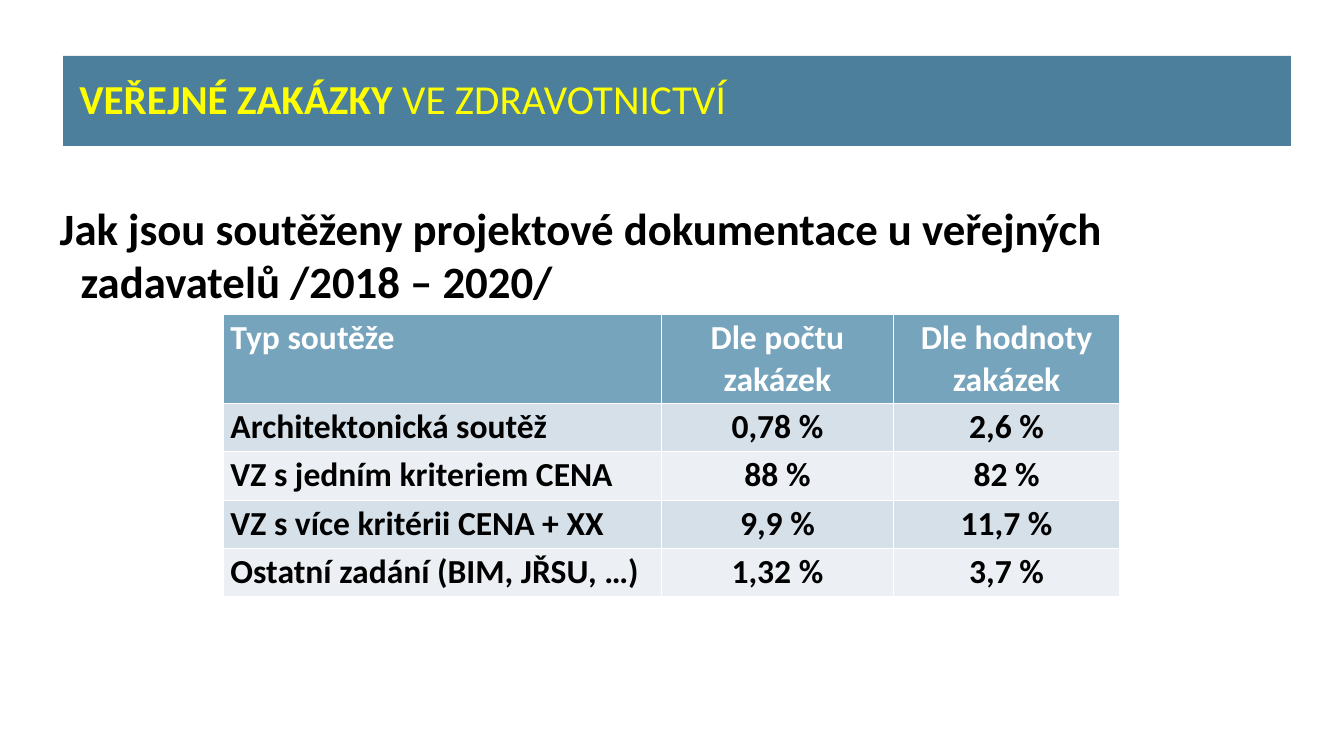
import pptx
import pptx.dml.color
import pptx.enum.text
import pptx.util

Inches, Pt = pptx.util.Inches, pptx.util.Pt
Align = pptx.enum.text.PP_ALIGN
Anchor = pptx.enum.text.MSO_ANCHOR

TITLE = [("VEŘEJNÉ ZAKÁZKY ", True), ("VE ZDRAVOTNICTVÍ", False)]
QUESTION = "Jak jsou soutěženy projektové dokumentace u veřejných zadavatelů /2018 – 2020/"
TENDERS = [
    ("Typ soutěže", "Dle počtu zakázek", "Dle hodnoty zakázek"),
    ("Architektonická soutěž", "0,78 %", "2,6 %"),
    ("VZ s jedním kriteriem CENA", "88 %", "82 %"),
    ("VZ s více kritérii CENA + XX", "9,9 %", "11,7 %"),
    ("Ostatní zadání (BIM, JŘSU, …)", "1,32 %", "3,7 %"),
]
COLUMN_WIDTHS = (6.51, 3.46, 3.36)
HEADER_HEIGHT, ROW_HEIGHT = 1.32, 0.72

THEME = {
    "font": "Calibri",
    "title_size": 44.1, "question_size": 48, "table_size": 36,
    "banner": "4B7F9B", "title": "FFFF00", "text": "000000",
    "header": "76A4BD", "header_text": "FFFFFF",
    "bands": ("D6E0E8", "ECF0F4"),
}


def rgb(name):
    return pptx.dml.color.RGBColor.from_string(THEME.get(name, name))


def set_font(font, size, color, bold=None):
    font.name = THEME["font"]
    font.size = Pt(THEME[size])
    font.color.rgb = rgb(color)
    font.bold = bold


def place(shape, left, top, width, height):
    shape.left, shape.top = Inches(left), Inches(top)
    shape.width, shape.height = Inches(width), Inches(height)


def add_title(slide):
    banner = slide.shapes.title
    place(banner, 0.94, 0.83, 18.27, 1.34)
    banner.fill.solid()
    banner.fill.fore_color.rgb = rgb("banner")
    frame = banner.text_frame
    frame.auto_size = pptx.enum.text.MSO_AUTO_SIZE.NONE
    frame.word_wrap = True
    frame.vertical_anchor = Anchor.MIDDLE
    frame.margin_left = Inches(0.24)
    line = frame.paragraphs[0]
    line.alignment = Align.LEFT
    line.line_spacing = 0.9
    set_font(line.font, "title_size", "title")
    for words, bold in TITLE:
        run = line.add_run()
        run.text = words
        set_font(run.font, "title_size", "title", bold)


def add_question(slide):
    box = slide.shapes.add_textbox(Inches(0.79), Inches(2.13), Inches(18.66), Inches(1.92))
    frame = box.text_frame
    frame.word_wrap = True
    frame.margin_top = Inches(0.85)
    question = frame.paragraphs[0]
    question.text = QUESTION
    set_font(question.font, "question_size", "text", True)
    hanging = question._p.get_or_add_pPr()
    hanging.set("marL", str(Inches(0.31)))
    hanging.set("indent", str(-Inches(0.31)))


def add_tenders(slide):
    height = HEADER_HEIGHT + ROW_HEIGHT * (len(TENDERS) - 1)
    table = slide.shapes.add_table(
        len(TENDERS), len(COLUMN_WIDTHS), Inches(3.33), Inches(4.68),
        Inches(sum(COLUMN_WIDTHS)), Inches(height)).table
    for column, width in zip(table.columns, COLUMN_WIDTHS):
        column.width = Inches(width)
    for r, values in enumerate(TENDERS):
        is_header = r == 0
        table.rows[r].height = Inches(HEADER_HEIGHT if is_header else ROW_HEIGHT)
        fill = "header" if is_header else THEME["bands"][(r - 1) % 2]
        for c, value in enumerate(values):
            cell = table.cell(r, c)
            cell.fill.solid()
            cell.fill.fore_color.rgb = rgb(fill)
            cell.text = value
            entry = cell.text_frame.paragraphs[0]
            entry.alignment = Align.CENTER if c else Align.LEFT
            set_font(entry.font, "table_size", "header_text" if is_header else "text", True)


def main():
    deck = pptx.Presentation()
    deck.slide_width, deck.slide_height = Inches(20), Inches(11.25)
    slide = deck.slides.add_slide(deck.slide_layouts.get_by_name("Title Only"))
    add_title(slide)
    add_question(slide)
    add_tenders(slide)
    deck.save("out.pptx")


if __name__ == "__main__":
    main()
